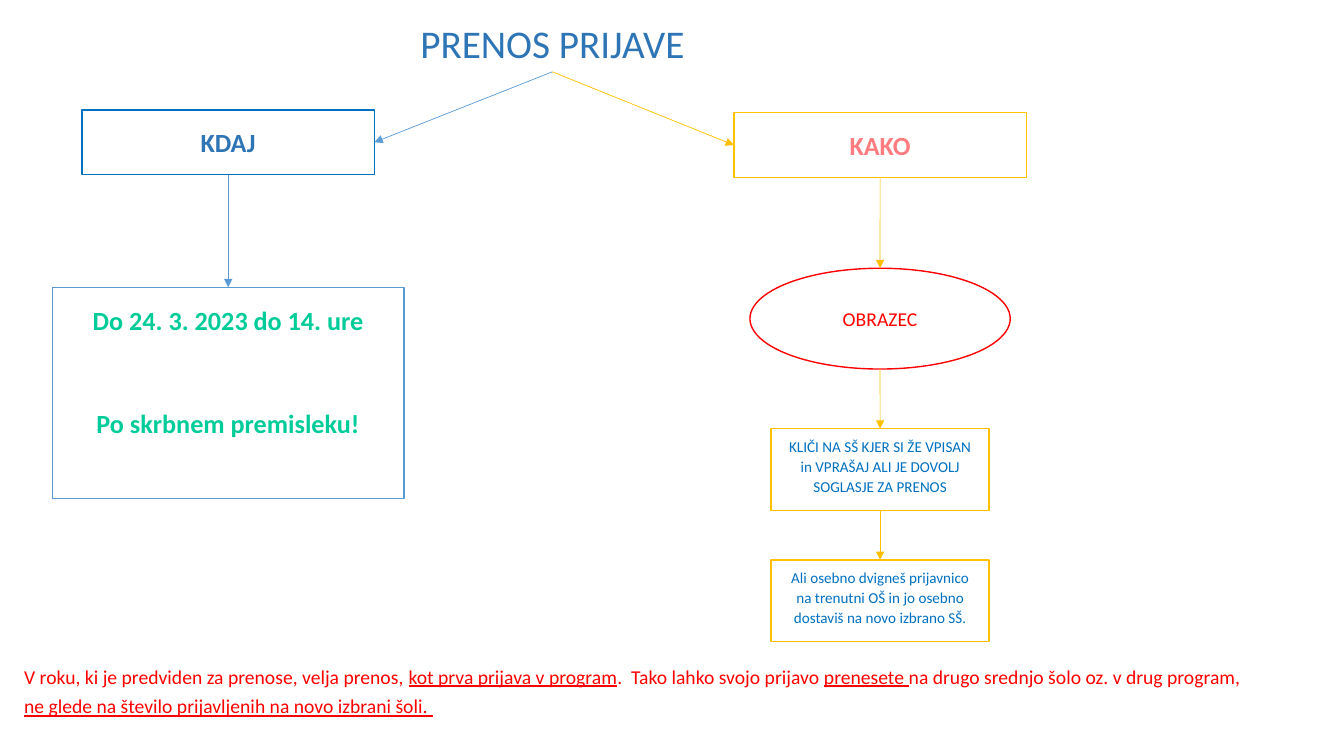
"""Builds the slide PRENOS PRIJAVE, a flow chart of when and how to move an application."""
from lxml.etree import SubElement
from pptx import Presentation
from pptx.dml.color import RGBColor
from pptx.enum.shapes import MSO_CONNECTOR, MSO_SHAPE
from pptx.enum.text import MSO_ANCHOR, MSO_AUTO_SIZE, PP_ALIGN
from pptx.oxml.ns import qn
from pptx.util import Cm, Pt


def tint(code):
    return RGBColor.from_string(code)


def style(run, size, color, bold=False):
    font = run.font
    font.name, font.size, font.bold = "Calibri", Pt(size), bold
    font.color.rgb = tint(color)


BLUE, SKY, GOLD, RED = "0070C0", "5B9BD5", "FFC000", "FF0000"
LEFT, RIGHT = 5.75, 22.18

deck = Presentation()
deck.slide_width, deck.slide_height = Cm(33.87), Cm(19.05)
slide = deck.slides.add_slide(deck.slide_layouts[6])
shapes = slide.shapes

title = shapes.add_textbox(Cm(9.03), Cm(0.36), Cm(9.78), Cm(1.45))
frame = title.text_frame
frame.word_wrap = True
frame.auto_size = MSO_AUTO_SIZE.SHAPE_TO_FIT_TEXT
frame.text = "PRENOS PRIJAVE"
frame.paragraphs[0].alignment = PP_ALIGN.CENTER
style(frame.paragraphs[0].runs[0], 28, "2E75B6")

boxes = [
    ("when", LEFT, 2.77, 7.37, 1.63, BLUE, "2E75B6", 18.7, 1.3, "KDAJ"),
    ("date", LEFT, 7.24, 8.86, 5.33, SKY, "00CC99", 18.7, 1.3,
     "Do 24. 3. 2023 do 14. ure\nPo skrbnem premisleku!"),
    ("how", RIGHT, 2.84, 7.37, 1.63, GOLD, "FF7C80", 18.7, 1.3, "KAKO"),
    ("form", RIGHT, 6.76, 6.56, 2.54, RED, RED, 14, 1, "OBRAZEC"),
    ("call", RIGHT, 10.8, 5.49, 2.06, GOLD, BLUE, 10.8, 1.1,
     "KLIČI NA SŠ KJER SI ŽE VPISAN in VPRAŠAJ ALI JE DOVOLJ SOGLASJE ZA PRENOS"),
    ("visit", RIGHT, 14.11, 5.49, 2.06, GOLD, BLUE, 10.8, 1.1,
     "Ali osebno dvigneš prijavnico na trenutni OŠ in jo osebno dostaviš na novo izbrano SŠ."),
]
nodes = {"title": title}
for name, mid, top, width, height, edge, ink, size, space, text in boxes:
    oval = name == "form"
    kind = MSO_SHAPE.OVAL if oval else MSO_SHAPE.RECTANGLE
    box = shapes.add_shape(kind, Cm(mid - width / 2), Cm(top), Cm(width), Cm(height))
    box.shadow.inherit = False
    box.line.color.rgb = tint(edge)
    box.line.width = Pt(1)
    frame = box.text_frame
    frame.word_wrap = True
    frame.text = text
    if oval:
        box.fill.background()
        frame.vertical_anchor = MSO_ANCHOR.MIDDLE
    else:
        box.fill.solid()
        box.fill.fore_color.rgb = tint("FFFFFF")
        frame.vertical_anchor = MSO_ANCHOR.TOP
        frame.margin_left = frame.margin_right = Cm(0.33)
        frame.margin_top = frame.margin_bottom = Cm(0.18)
    for row, para in enumerate(frame.paragraphs):
        para.alignment = PP_ALIGN.CENTER
        para.line_spacing = space
        para.space_before = Pt(0 if oval else 44.5 if row else 7.5)
        style(para.runs[0], size, ink, bold=size > 18)
    nodes[name] = box

links = [
    ("title", "when", 3, SKY), ("when", "date", 0, SKY),
    ("title", "how", 1, GOLD), ("how", "form", 0, GOLD),
    ("form", "call", 0, GOLD), ("call", "visit", 0, GOLD),
]
for start, end, side, color in links:
    first = nodes[start]
    x, y = first.left + first.width // 2, first.top + first.height
    link = shapes.add_connector(MSO_CONNECTOR.STRAIGHT, x, y, x, y)
    if start != "form":
        link.begin_connect(first, 2)
    link.end_connect(nodes[end], side)
    link.line.color.rgb = tint(color)
    link.line.width = Pt(0.5)
    SubElement(link.line._get_or_add_ln(), qn("a:tailEnd"), type="triangle")
    SubElement(link._element.spPr, qn("a:effectLst"))

note = shapes.add_textbox(Cm(0.36), Cm(16.46), Cm(32.61), Cm(2.49))
frame = note.text_frame
frame.word_wrap = True
frame.auto_size = MSO_AUTO_SIZE.SHAPE_TO_FIT_TEXT
para = frame.paragraphs[0]
para.alignment = PP_ALIGN.LEFT
para.line_spacing = Pt(21.3)
parts = [
    ("V roku, ki je predviden za prenose, velja prenos, ", False),
    ("kot prva prijava v program", True),
    (".  Tako lahko svojo prijavo ", False),
    ("prenesete ", True),
    ("na drugo srednjo šolo oz. v drug program,", False),
    ("ne glede na število prijavljenih na novo izbrani šoli. ", True),
]
for text, under in parts:
    if text.startswith("ne glede"):
        para.add_line_break()
    run = para.add_run()
    run.text = text
    style(run, 14, RED)
    run.font.underline = under

deck.save("out.pptx")
